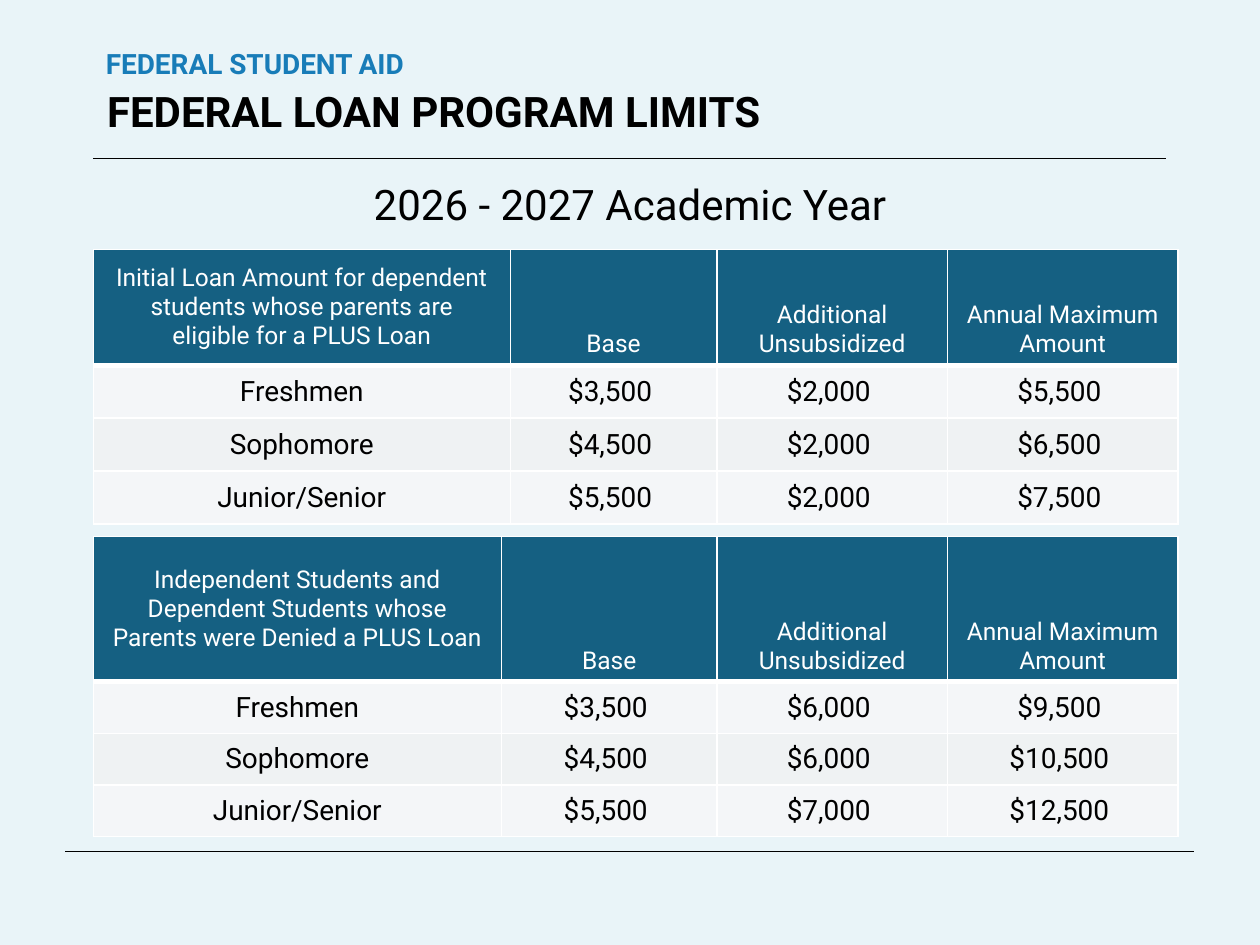
from lxml.etree import SubElement
from pptx import Presentation
from pptx.dml.color import RGBColor
from pptx.enum.shapes import MSO_CONNECTOR
from pptx.enum.text import MSO_ANCHOR as ANCHOR, MSO_AUTO_SIZE as AUTO_SIZE, PP_ALIGN as ALIGN
from pptx.oxml.ns import qn
from pptx.util import Inches, Pt


def color(value):
    return RGBColor.from_string(value)


def write(paragraph, text, font_color, **font_format):
    paragraph.text = text
    paragraph.space_before = Pt(0)
    font_format = {"name": "Roboto", "bold": False, **font_format}
    for name, value in font_format.items():
        setattr(paragraph.font, name, value)
    paragraph.font.color.rgb = color(font_color)


presentation = Presentation()
presentation.slide_width = Inches(10)
presentation.slide_height = Inches(7.5)
slide = presentation.slides.add_slide(presentation.slide_layouts.get_by_name("Section Header"))
slide.background.fill.solid()
slide.background.fill.fore_color.rgb = color("E9F4F8")

# Rules under the heading and above the footer
for left, right, top in [(0.52, 9.48, 6.76), (0.74, 9.25, 1.26)]:
    rule = slide.shapes.add_connector(
        MSO_CONNECTOR.STRAIGHT, Inches(left), Inches(top), Inches(right), Inches(top))
    rule.line.color.rgb = color("000000")
    rule.line.width = Pt(0.5)
    SubElement(rule._element.spPr, qn("a:effectLst"))

# Section name, slide title and academic year
title = slide.shapes.title
section = slide.placeholders[1]
year = slide.shapes.add_textbox(0, 0, 0, 0)
headings = [
    (section, (0.74, 0.35, 8.5, 0.42), "FEDERAL STUDENT AID", "187CB8", 16, True, ALIGN.LEFT, 0.9),
    (title, (0.75, 0.67, 8.5, 0.53), "FEDERAL LOAN PROGRAM LIMITS", "000000", 24, True, ALIGN.LEFT, 0.9),
    (year, (1.79, 1.37, 6.42, 0.5), "2026 - 2027 Academic Year", "000000", 24, False, ALIGN.CENTER, 1.0),
]
for shape, box, text, font_color, size, bold, alignment, line_spacing in headings:
    shape.left, shape.top, shape.width, shape.height = [Inches(length) for length in box]
    frame = shape.text_frame
    frame.word_wrap = True
    frame.auto_size = AUTO_SIZE.NONE
    frame.vertical_anchor = ANCHOR.TOP
    paragraph = frame.paragraphs[0]
    write(paragraph, text, font_color, size=Pt(size), bold=bold)
    paragraph.alignment = alignment
    paragraph.line_spacing = line_spacing

# Loan limit tables: top, column widths, header height, row height, rows
column_names = ["Base", "Additional Unsubsidized", "Annual Maximum Amount"]
loan_tables = [
    (1.98, [3.31, 1.64, 1.83, 1.83], 0.92, 0.42, [
        ["Initial Loan Amount for dependent students whose parents are eligible for a PLUS Loan", *column_names],
        ["Freshmen", "$3,500 ", "$2,000 ", "$5,500 "],
        ["Sophomore", "$4,500 ", "$2,000 ", "$6,500 "],
        ["Junior/Senior", "$5,500 ", "$2,000 ", "$7,500 "],
    ]),
    (4.26, [3.24, 1.71, 1.83, 1.83], 1.15, 0.41, [
        ["Independent Students and Dependent Students whose Parents were Denied a PLUS Loan", *column_names],
        ["Freshmen", "$3,500 ", "$6,000 ", "$9,500 "],
        ["Sophomore", "$4,500 ", "$6,000 ", "$10,500 "],
        ["Junior/Senior", "$5,500 ", "$7,000 ", "$12,500 "],
    ]),
]
cell_format = {
    "margin_left": Inches(0.13), "margin_right": Inches(0.13),
    "margin_top": Inches(0.05), "margin_bottom": Inches(0.05),
}
for top, widths, header_height, row_height, rows in loan_tables:
    heights = [header_height] + [row_height] * (len(rows) - 1)
    table = slide.shapes.add_table(
        len(rows), len(widths), Inches(0.74), Inches(top),
        Inches(sum(widths)), Inches(sum(heights))).table
    for column, width in zip(table.columns, widths):
        column.width = Inches(width)

    for row_index, texts in enumerate(rows):
        table.rows[row_index].height = Inches(heights[row_index])
        is_header = row_index == 0
        for column_index, text in enumerate(texts):
            cell = table.cell(row_index, column_index)
            for name, value in cell_format.items():
                setattr(cell, name, value)
            bottom_aligned = is_header and column_index > 0
            cell.vertical_anchor = ANCHOR.BOTTOM if bottom_aligned else ANCHOR.MIDDLE
            paragraph = cell.text_frame.paragraphs[0]
            write(paragraph, text, "FFFFFF" if is_header else "000000",
                  size=Pt(14 if is_header else 16))
            paragraph.alignment = ALIGN.CENTER

            # White borders, thicker between the header and the first row
            properties = cell._tc.get_or_add_tcPr()
            border_widths = {"L": 1, "R": 1, "T": 3 if row_index == 1 else 1, "B": 3 if is_header else 1}
            for side, width in border_widths.items():
                border = SubElement(properties, qn(f"a:ln{side}"), w=str(Pt(width)))
                border_fill = SubElement(border, qn("a:solidFill"))
                SubElement(border_fill, qn("a:srgbClr"), val="FFFFFF")

            # Solid header, translucent banded rows
            cell.fill.solid()
            band = "F8F8F8" if row_index % 2 else "F2F2F2"
            cell.fill.fore_color.rgb = color("156082" if is_header else band)
            if not is_header:
                fill_color = properties.find(qn("a:solidFill")).find(qn("a:srgbClr"))
                SubElement(fill_color, qn("a:alpha"), val="75000")

presentation.save("out.pptx")
